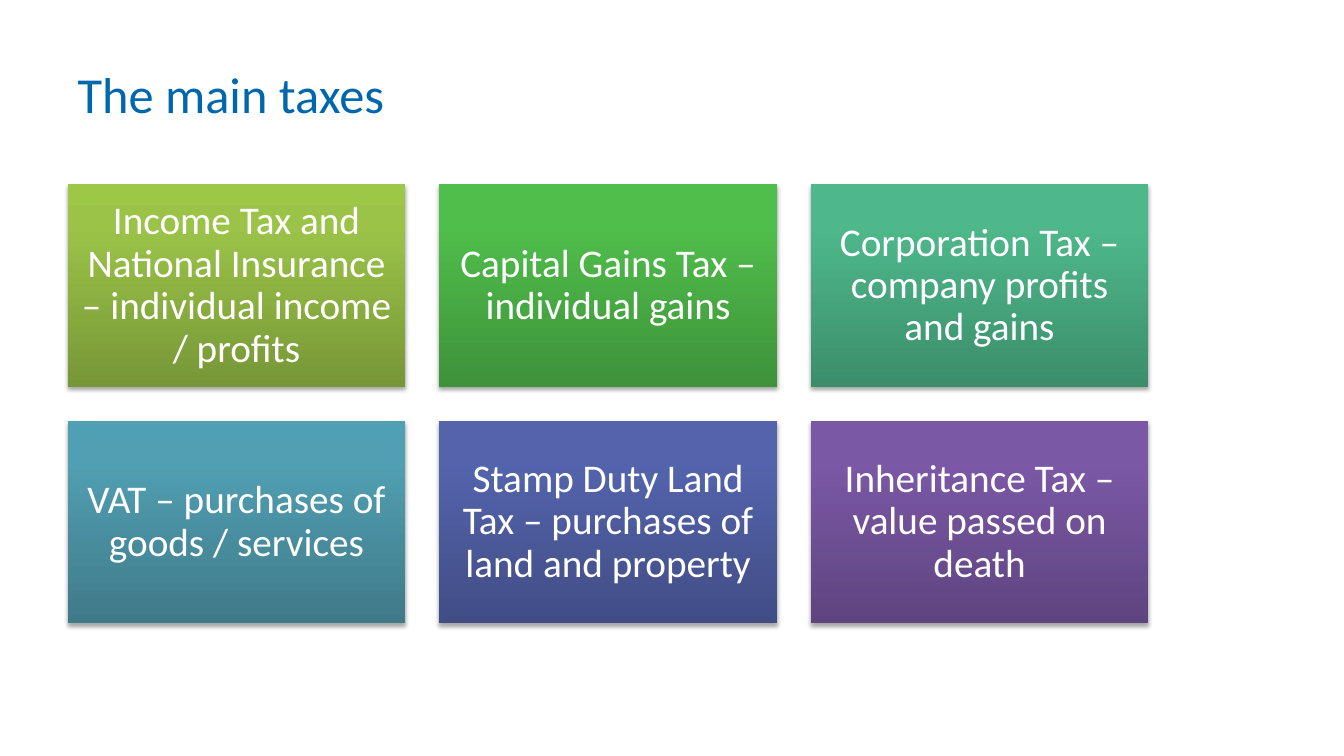
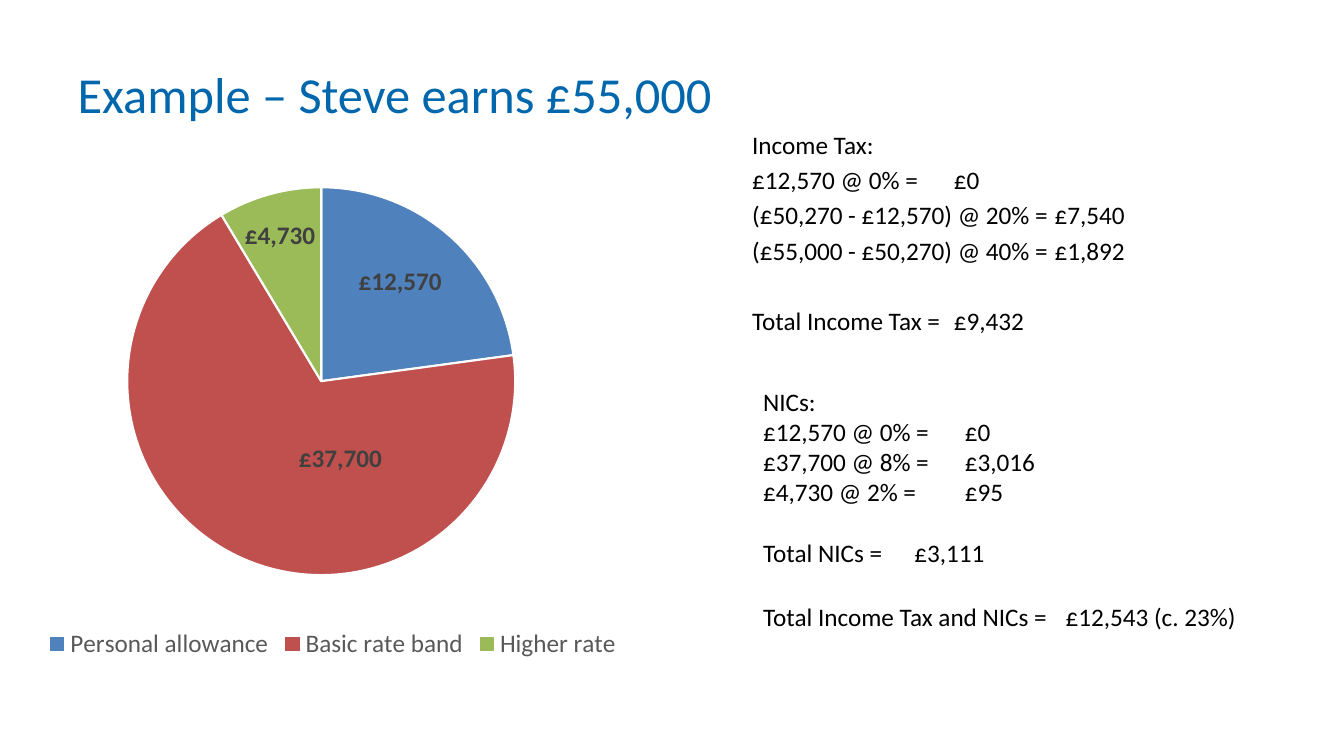
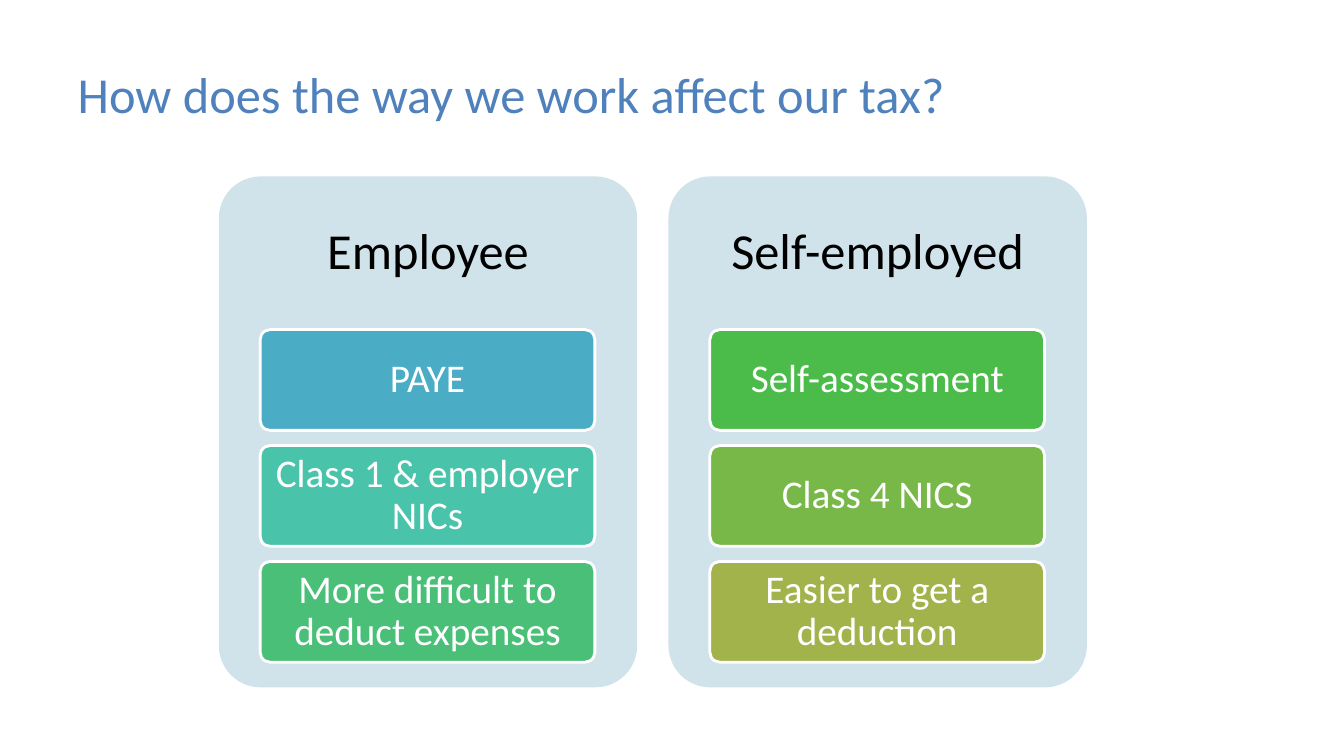
from copy import deepcopy

from lxml.etree import SubElement
from pptx import Presentation
from pptx.chart.data import CategoryChartData
from pptx.dml.color import RGBColor
from pptx.enum.chart import XL_CHART_TYPE, XL_LABEL_POSITION, XL_LEGEND_POSITION
from pptx.enum.shapes import MSO_SHAPE
from pptx.enum.text import MSO_ANCHOR, MSO_AUTO_SIZE, PP_ALIGN
from pptx.oxml import parse_xml
from pptx.oxml.ns import nsdecls, qn
from pptx.util import Inches, Pt

FONT = "Calibri"
WHITE = RGBColor(0xFF, 0xFF, 0xFF)
BLACK = RGBColor(0x00, 0x00, 0x00)
TITLE_BLUE = RGBColor(0x00, 0x67, 0xAC)
BLUE = RGBColor(0x4F, 0x81, 0xBD)
RED = RGBColor(0xC0, 0x50, 0x4D)
GREEN = RGBColor(0x9B, 0xBB, 0x59)
PANEL = RGBColor(0xD0, 0xE3, 0xEA)
LABEL_GREY = RGBColor(0x40, 0x40, 0x40)
LEGEND_GREY = RGBColor(0x59, 0x59, 0x59)
POUNDS = '"£"#,##0'


def write(frame, text, size=18, color=BLACK, align=PP_ALIGN.LEFT, spacing=1.0, before=0, tab=None):
    para = frame.add_paragraph() if frame.text else frame.paragraphs[0]
    properties = para._p.get_or_add_pPr()
    properties.set("marL", "0")
    properties.set("indent", "0")
    SubElement(properties, qn("a:buNone"))
    if tab:
        tabs = SubElement(properties, qn("a:tabLst"))
        SubElement(tabs, qn("a:tab"), pos=str(Inches(tab)), algn="l")
    para.alignment = align
    para.line_spacing = spacing
    para.space_before = Pt(before)
    span = para.add_run()
    span.text = text
    span.font.name = FONT
    span.font.size = Pt(size)
    span.font.color.rgb = color


def manual_layout(**settings):
    items = "".join(f'<c:{name} val="{value}"/>' for name, value in settings.items())
    return parse_xml(f'<c:layout {nsdecls("c")}><c:manualLayout>{items}</c:manualLayout></c:layout>')


deck = Presentation()
deck.slide_width = Inches(13.33)
deck.slide_height = Inches(7.5)

pages = []
for heading, layout_index, color in [
    ("The main taxes", 5, TITLE_BLUE),
    ("Example – Steve earns £55,000", 1, TITLE_BLUE),
    ("How does the way we work affect our tax?", 5, BLUE),
]:
    page = deck.slides.add_slide(deck.slide_layouts[layout_index])
    title = page.shapes.title
    title.left, title.top = Inches(0.67), Inches(0.3)
    title.width, title.height = Inches(10.72), Inches(1.25)
    frame = title.text_frame
    frame.auto_size = MSO_AUTO_SIZE.NONE
    frame.vertical_anchor = MSO_ANCHOR.MIDDLE
    write(frame, heading, size=36, color=color)
    pages.append(page)
taxes_page, example_page, work_page = pages

TAXES = [
    ("Income Tax and National Insurance – individual income / profits", "779737", "9BC348", "9DC746"),
    ("Capital Gains Tax – individual gains", "3E923A", "50BE4B", "4FC149"),
    ("Corporation Tax – company profits and gains", "3C8E6B", "4EB88B", "4CBB8C"),
    ("VAT – purchases of goods / services", "3F7A89", "519FB2", "50A0B5"),
    ("Stamp Duty Land Tax – purchases of land and property", "414D85", "5464AC", "5363AF"),
    ("Inheritance Tax – value passed on death", "5F4480", "7B58A6", "7C57A8"),
]
tile_width, tile_height = 3.35, 2.01
tile_gap = tile_width / 10
for index, (text, *shades) in enumerate(TAXES):
    row, column = divmod(index, 3)
    tile = taxes_page.shapes.add_shape(
        MSO_SHAPE.RECTANGLE,
        Inches(0.67 + column * (tile_width + tile_gap)),
        Inches(1.83 + row * (tile_height + tile_gap)),
        Inches(tile_width),
        Inches(tile_height),
    )
    tile.line.fill.background()
    tile.fill.gradient()
    tile.fill.gradient_angle = 90
    properties = tile.element.spPr
    stop_list = properties.find(".//" + qn("a:gsLst"))
    stop_list.append(deepcopy(stop_list[-1]))
    for stop, shade, position in zip(tile.fill.gradient_stops, shades, (0, 0.8, 1)):
        stop.color.rgb = RGBColor.from_string(shade)
        stop.position = position
    properties.append(parse_xml(
        f'<a:effectLst {nsdecls("a")}>'
        f'<a:outerShdw blurRad="{Pt(3.1)}" dist="{Pt(1.8)}" dir="5400000" rotWithShape="0">'
        '<a:srgbClr val="000000"><a:alpha val="35000"/></a:srgbClr></a:outerShdw></a:effectLst>'
    ))
    frame = tile.text_frame
    frame.word_wrap = True
    frame.vertical_anchor = MSO_ANCHOR.MIDDLE
    frame.margin_left = frame.margin_right = frame.margin_top = frame.margin_bottom = Inches(0.12)
    write(frame, text, size=28, color=WHITE, align=PP_ALIGN.CENTER, spacing=0.9)

income_box = example_page.placeholders[1]
income_box.left, income_box.top = Inches(7.36), Inches(1.23)
income_box.width, income_box.height = Inches(5.51), Inches(2.41)
income_box.text_frame.auto_size = MSO_AUTO_SIZE.NONE
for text, before, tab in [
    ("Income Tax:", 0, None),
    ("£12,570 @ 0% =\t£0", 3.6, 3.75),
    ("(£50,270 - £12,570) @ 20% =\t£7,540", 3.6, 3),
    ("(£55,000 - £50,270) @ 40% =\t£1,892", 3.6, 3),
    ("Total Income Tax =\t£9,432", 29, 3.78),
]:
    write(income_box.text_frame, text, before=before, tab=tab)

data = CategoryChartData(number_format=POUNDS)
data.categories = ["Personal allowance", "Basic rate band", "Higher rate"]
data.add_series("Series 1", (12570, 37700, 4730))
chart = example_page.shapes.add_chart(
    XL_CHART_TYPE.PIE, Inches(-0.5), Inches(1.39), Inches(7.6), Inches(5.2), data
).chart
chart.has_title = False
chart.font.name = FONT
chart.font.size = Pt(10)
chart.has_legend = True
chart.legend.position = XL_LEGEND_POSITION.BOTTOM
chart.legend.include_in_layout = False
chart.legend.font.name = FONT
chart.legend.font.size = Pt(18)
chart.legend.font.color.rgb = LEGEND_GREY

plot_area = chart.element.find(".//" + qn("c:plotArea"))
for layout in plot_area.findall(qn("c:layout")):
    plot_area.remove(layout)
plot_area.insert(0, manual_layout(
    layoutTarget="inner", xMode="edge", yMode="edge", x=0.23, y=0.09, w=0.51, h=0.74
))

series = chart.plots[0].series[0]
labels = series.data_labels
labels.show_value = True
labels.number_format = POUNDS
labels.number_format_is_linked = False
labels.position = XL_LABEL_POSITION.CENTER
slices = [(BLUE, 0.02, -0.05), (RED, 0.08, -0.02), (GREEN, -0.02, -0.1)]
for index, (color, shift_x, shift_y) in enumerate(slices):
    point = series.points[index]
    point.format.fill.solid()
    point.format.fill.fore_color.rgb = color
    point.format.line.color.rgb = WHITE
    point.format.line.width = Pt(1.5)
    point.data_label.position = XL_LABEL_POSITION.CENTER
    for font in (labels.font, point.data_label.font):
        font.name = FONT
        font.size = Pt(18)
        font.bold = True
        font.color.rgb = LABEL_GREY
for label, (color, shift_x, shift_y) in zip(chart.element.iter(qn("c:dLbl")), slices):
    label.insert(1, manual_layout(x=shift_x, y=shift_y))

NICS_LINES = [
    ("NICs:", 0, None),
    ("£12,570 @ 0% =\t£0", 0, 4),
    ("£37,700 @ 8% =\t£3,016", 0, 4),
    ("£4,730 @ 2% =\t£95", 0, 4),
    ("Total NICs =\t£3,111", 22, 4),
]
TOTAL_LINES = [("Total Income Tax and NICs =\t£12,543 (c. 23%)", 0, 3)]
for top, width, height, lines in [(3.78, 5.08, 1.92, NICS_LINES), (5.92, 5.39, 0.71, TOTAL_LINES)]:
    box = example_page.shapes.add_textbox(Inches(7.47), Inches(top), Inches(width), Inches(height))
    box.text_frame.word_wrap = True
    for text, before, tab in lines:
        write(box.text_frame, text, before=before, tab=tab)

WORK_TYPES = [
    ("Employee", [
        ("PAYE", "4BACC6"),
        ("Class 1 & employer NICs", "4AC3AB"),
        ("More difficult to deduct expenses", "4ABF78"),
    ]),
    ("Self-employed", [
        ("Self-assessment", "4BBB4A"),
        ("Class 4 NICS", "78B849"),
        ("Easier to get a deduction", "A1B34A"),
    ]),
]
for column, (heading, features) in enumerate(WORK_TYPES):
    left = 2.17 + column * 4.46
    cards = [(heading, PANEL, left, 1.75, 4.15, 5.07, 36, BLACK, 3.6)]
    for row, (text, shade) in enumerate(features):
        fill = RGBColor.from_string(shade)
        cards.append((text, fill, left + 0.41, 3.27 + row * 1.15, 3.32, 1, 28, WHITE, 0.05))
    for text, fill, card_left, top, width, height, size, color, bottom in cards:
        card = work_page.shapes.add_shape(
            MSO_SHAPE.ROUNDED_RECTANGLE, Inches(card_left), Inches(top), Inches(width), Inches(height)
        )
        card.adjustments[0] = 0.1
        card.shadow.inherit = False
        card.fill.solid()
        card.fill.fore_color.rgb = fill
        if fill == PANEL:
            card.line.fill.background()
        else:
            card.line.color.rgb = WHITE
            card.line.width = Pt(2)
        frame = card.text_frame
        frame.word_wrap = True
        frame.vertical_anchor = MSO_ANCHOR.MIDDLE
        frame.margin_left = frame.margin_right = frame.margin_top = Inches(0.05)
        frame.margin_bottom = Inches(bottom)
        write(frame, text, size=size, color=color, align=PP_ALIGN.CENTER, spacing=0.9)

deck.save("out.pptx")
